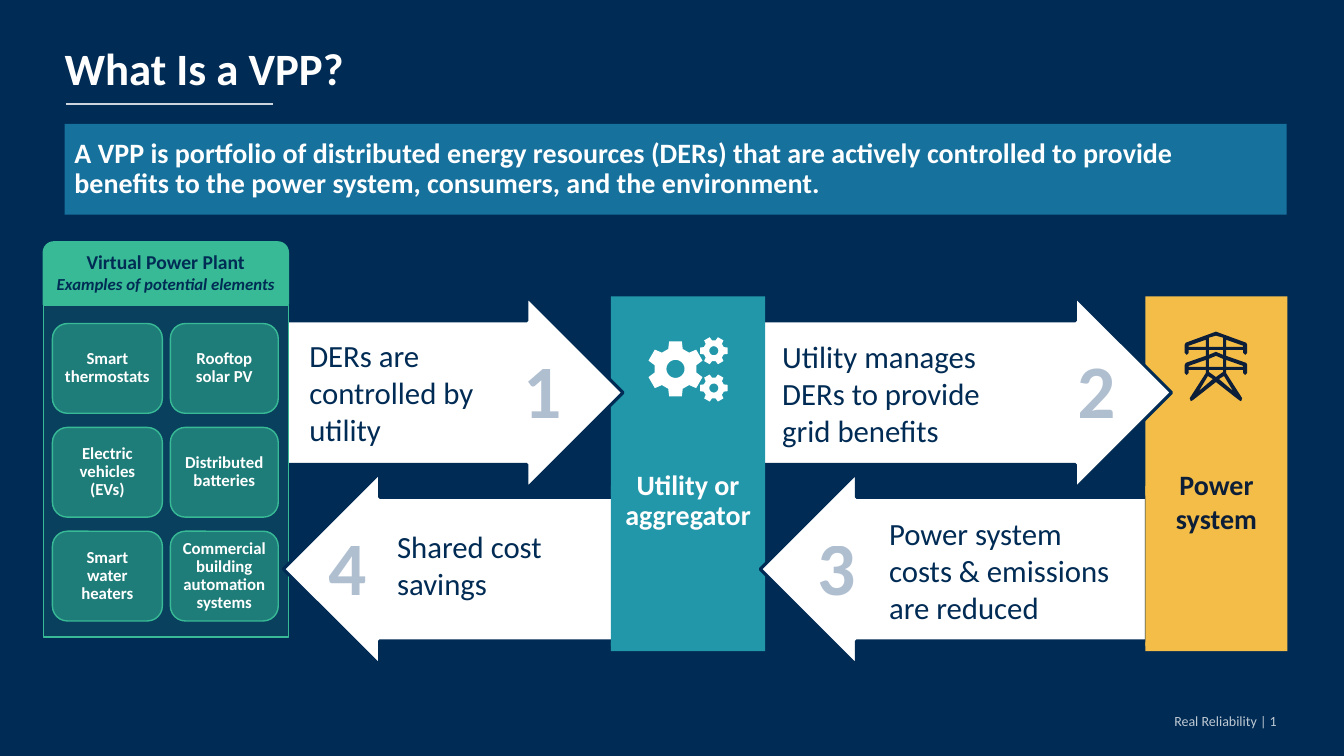
"""Build the slide that explains how a virtual power plant works."""
import math
from dataclasses import dataclass

from pptx import Presentation
from pptx import util as u
from pptx.dml.color import RGBColor
from pptx.enum import shapes, text
from pptx.oxml.ns import qn
from pptx.oxml.xmlchemy import OxmlElement

PX = 9144
FONT = "Calibri"
COLORS = {
    "navy": "002B54", "ink": "0D1E38", "white": "FFFFFF", "rule": "CCD5DD",
    "gold": "F3BD48", "teal": "2297AA", "green": "37BA95", "blue": "16719D",
    "slate": "6381A3",
}
KIND = shapes.MSO_SHAPE
ALIGN = text.PP_ALIGN
ANCHOR = text.MSO_ANCHOR
Point = tuple[float, float]


@dataclass
class Block:
    """A shape or text box, with lengths in px and alphas in percent."""
    box: tuple[int, int, int, int]
    words: str = ""
    kind: KIND | None = None
    fill: str = ""
    fill_alpha: int = 100
    line: str = ""
    line_pt: float = 1
    size: int = 22
    color: str = "navy"
    color_alpha: int = 100
    bold: bool = False
    align: ALIGN = ALIGN.LEFT
    anchor: ANCHOR = ANCHOR.TOP
    insets: tuple[int, int, int, int] = (10, 5, 10, 5)
    spacing: float = 1.0
    wrap: bool = True


@dataclass
class Gear:
    """A six-toothed wheel, with lengths in px and the turn in degrees."""
    center: Point
    outer: float
    root: float
    hole: float
    turn: int


def rgb(name: str) -> RGBColor:
    return RGBColor.from_string(COLORS[name])


def fade(parent, percent: int) -> None:
    if percent < 100:
        alpha = OxmlElement("a:alpha")
        alpha.set("val", str(percent * 1000))
        parent.find(f"{qn('a:solidFill')}/{qn('a:srgbClr')}").append(alpha)


def paint(shape, block: Block) -> None:
    shape.shadow.inherit = False
    if block.fill:
        shape.fill.solid()
        shape.fill.fore_color.rgb = rgb(block.fill)
        fade(shape._element.spPr, block.fill_alpha)
    if block.line:
        shape.line.color.rgb = rgb(block.line)
        shape.line.width = u.Pt(block.line_pt)
    else:
        shape.line.fill.background()


def write(shape, block: Block) -> None:
    frame = shape.text_frame
    frame.text = block.words
    frame.word_wrap = block.wrap
    frame.vertical_anchor = block.anchor
    if not block.wrap:
        frame.auto_size = text.MSO_AUTO_SIZE.SHAPE_TO_FIT_TEXT
    (frame.margin_left, frame.margin_top,
     frame.margin_right, frame.margin_bottom) = (i * PX for i in block.insets)
    for paragraph in frame.paragraphs:
        paragraph.alignment = block.align
        paragraph.line_spacing = block.spacing
        for run in paragraph.runs:
            run.font.name = FONT
            run.font.size = u.Pt(block.size)
            run.font.bold = block.bold
            run.font.color.rgb = rgb(block.color)
            fade(run._r.rPr, block.color_alpha)


def draw(slide, block: Block):
    box = [side * PX for side in block.box]
    if block.kind is None:
        shape = slide.shapes.add_textbox(*box)
    else:
        shape = slide.shapes.add_shape(block.kind, *box)
        paint(shape, block)
    if block.words:
        write(shape, block)
    return shape


def draw_arrow(slide, box: tuple[int, int, int, int], rotation: int = 0) -> None:
    arrow = draw(slide, Block(box, kind=KIND.RIGHT_ARROW, fill="white", line="navy", line_pt=2.25))
    arrow.adjustments[0] = 0.746
    arrow.adjustments[1] = 0.5
    arrow.rotation = rotation


def draw_outline(slide, contours: list[list[Point]], fill: str) -> None:
    scaled = [[(x * PX, y * PX) for x, y in contour] for contour in contours]
    builder = slide.shapes.build_freeform(*scaled[0][0])
    for index, contour in enumerate(scaled):
        if index:
            builder.move_to(*contour[0])
        builder.add_line_segments(contour[1:], close=True)
    paint(builder.convert_to_shape(), Block((0, 0, 0, 0), fill=fill))


def gear_contours(gear: Gear) -> list[list[Point]]:
    def at(radius: float, degrees: float) -> Point:
        angle = math.radians(degrees + gear.turn)
        return gear.center[0] + radius * math.cos(angle), gear.center[1] + radius * math.sin(angle)

    tooth = ((gear.root, -20), (gear.outer, -13), (gear.outer, 13), (gear.root, 20))
    rim = [at(radius, step + offset) for step in range(0, 360, 60) for radius, offset in tooth]
    return [rim, [at(gear.hole, degrees) for degrees in range(0, 360, 15)]]


def pylon_contours(axis: int) -> list[list[Point]]:
    centered = [
        [(0, 329), (30, 340), (31, 342), (31, 350), (29, 352), (27, 350), (27, 347), (10, 347),
         (10, 353), (30, 360), (31, 362), (31, 370), (29, 372), (27, 370), (27, 367), (10, 367),
         (10, 370), (26, 395), (25, 398), (23, 397), (0, 379)],
        [(0, 349), (7, 352), (7, 347)],
        [(0, 353), (7, 356), (7, 364)],
        [(0, 374), (7, 369), (7, 367)],
        [(0, 333), (7, 335), (7, 344)],
    ]
    paired = [
        [(10, 337), (27, 343), (27, 344), (10, 344)],
        [(10, 357), (27, 363), (27, 364), (10, 364)],
        [(8, 373), (3, 376), (17, 388)],
    ]
    whole = [half + [(-x, y) for x, y in reversed(half)] for half in centered]
    sides = [[(sign * x, y) for x, y in part] for part in paired for sign in (1, -1)]
    return [[(axis + x, y) for x, y in contour] for contour in whole + sides]


def draw_heading(slide) -> None:
    rule = slide.shapes.add_connector(
        shapes.MSO_CONNECTOR.STRAIGHT, 65 * PX, 103 * PX, 271 * PX, 103 * PX)
    rule.line.color.rgb = rgb("rule")
    rule.line.width = u.Pt(1)
    rule._element.spPr.append(OxmlElement("a:effectLst"))
    draw(slide, Block((56, 42, 1119, 61), "What Is a VPP?", size=32, color="white", bold=True,
                      anchor=ANCHOR.BOTTOM, insets=(8, 5, 10, 10), spacing=0.8))
    draw(slide, Block(
        (64, 123, 1212, 90),
        "A VPP is portfolio of distributed energy resources (DERs) that are actively controlled "
        "to provide benefits to the power system, consumers, and the environment.",
        KIND.RECTANGLE, "blue", size=20, color="white", bold=True, anchor=ANCHOR.MIDDLE,
        insets=(10, 5, 50, 5), spacing=0.9))
    draw(slide, Block((1067, 695, 209, 40), "Real Reliability | 1", size=10, color="white",
                      color_alpha=75, align=ALIGN.RIGHT, anchor=ANCHOR.MIDDLE))


def draw_plant(slide) -> None:
    draw(slide, Block((43, 303, 243, 329), kind=KIND.RECTANGLE, fill="green", fill_alpha=15, line="green"))
    header = draw(slide, Block(
        (43, 240, 243, 62), "Virtual Power Plant\nExamples of potential elements",
        KIND.ROUND_2_SAME_RECTANGLE, "green", line="green", size=14, bold=True,
        align=ALIGN.CENTER, insets=(10, 5, 10, 10)))
    examples = header.text_frame.paragraphs[1].runs[0].font
    examples.size = u.Pt(12)
    examples.italic = True
    columns = (
        (52, 109, ("Smart thermostats", "Electric vehicles (EVs)", "Smart water heaters")),
        (169, 107, ("Rooftop\vsolar PV", "Distributed batteries", "Commercial building automation systems")),
    )
    for left, width, elements in columns:
        for row, element in enumerate(elements):
            side = 0 if element.startswith(("Smart t", "Comm")) else 10
            draw(slide, Block((left, 321 + 103 * row, width, 89), element, KIND.ROUNDED_RECTANGLE,
                              "green", 50, "green", size=12, color="white", bold=True,
                              align=ALIGN.CENTER, anchor=ANCHOR.MIDDLE,
                              insets=(side, 5, side, 5), spacing=0.9))


def draw_party(slide, left: int, width: int, words: str, fill: str, color: str, spacing: float) -> None:
    draw(slide, Block((left, 294, width, 352), words, KIND.RECTANGLE, fill, size=20, color=color,
                      bold=True, align=ALIGN.CENTER, anchor=ANCHOR.MIDDLE,
                      insets=(10, 60, 10, 5), spacing=spacing))


def draw_step(slide, number: int, corner: tuple[int, int], box: tuple[int, int, int, int], words: str) -> None:
    draw(slide, Block(box, words, KIND.RECTANGLE, "white", insets=(10, 10, 10, 10)))
    draw(slide, Block((*corner, 59, 101), str(number), size=54, color="slate", color_alpha=50,
                      bold=True, wrap=False))


def main() -> None:
    deck = Presentation()
    deck.slide_width, deck.slide_height = 1333 * PX, 750 * PX
    slide = deck.slides.add_slide(deck.slide_layouts[6])
    slide.background.fill.solid()
    slide.background.fill.fore_color.rgb = rgb("navy")
    draw_heading(slide)
    draw_party(slide, 1136, 141, "Power system", "gold", "ink", 1.0)
    draw_outline(slide, pylon_contours(1206), "ink")
    draw_arrow(slide, (754, 294, 408, 191))
    draw_party(slide, 606, 153, "Utility or aggregator", "teal", "white", 0.9)
    gears = (Gear((670, 366), 28, 21, 9, 30), Gear((708, 348), 14, 10.5, 4.5, 0),
             Gear((708, 385), 14, 10.5, 4.5, 0))
    draw_outline(slide, [contour for gear in gears for contour in gear_contours(gear)], "white")
    draw_arrow(slide, (285, 294, 333, 191))
    draw_step(slide, 1, (509, 335), (297, 324, 217, 131), "DERs are controlled by utility")
    draw_step(slide, 2, (1059, 335), (766, 325, 269, 131), "Utility manages DERs to provide grid benefits")
    draw_plant(slide)
    draw_arrow(slide, (281, 469, 332, 191), 180)
    draw_step(slide, 4, (316, 511), (384, 514, 219, 94), "Shared cost savings")
    draw(slide, Block((606, 482, 12, 159), kind=KIND.RECTANGLE, fill="teal"))
    draw_arrow(slide, (754, 469, 383, 191), 180)
    draw_step(slide, 3, (801, 511), (872, 501, 243, 131), "Power system costs & emissions are reduced")
    draw(slide, Block((1136, 482, 10, 159), kind=KIND.RECTANGLE, fill="gold"))
    deck.save("out.pptx")


if __name__ == "__main__":
    main()
